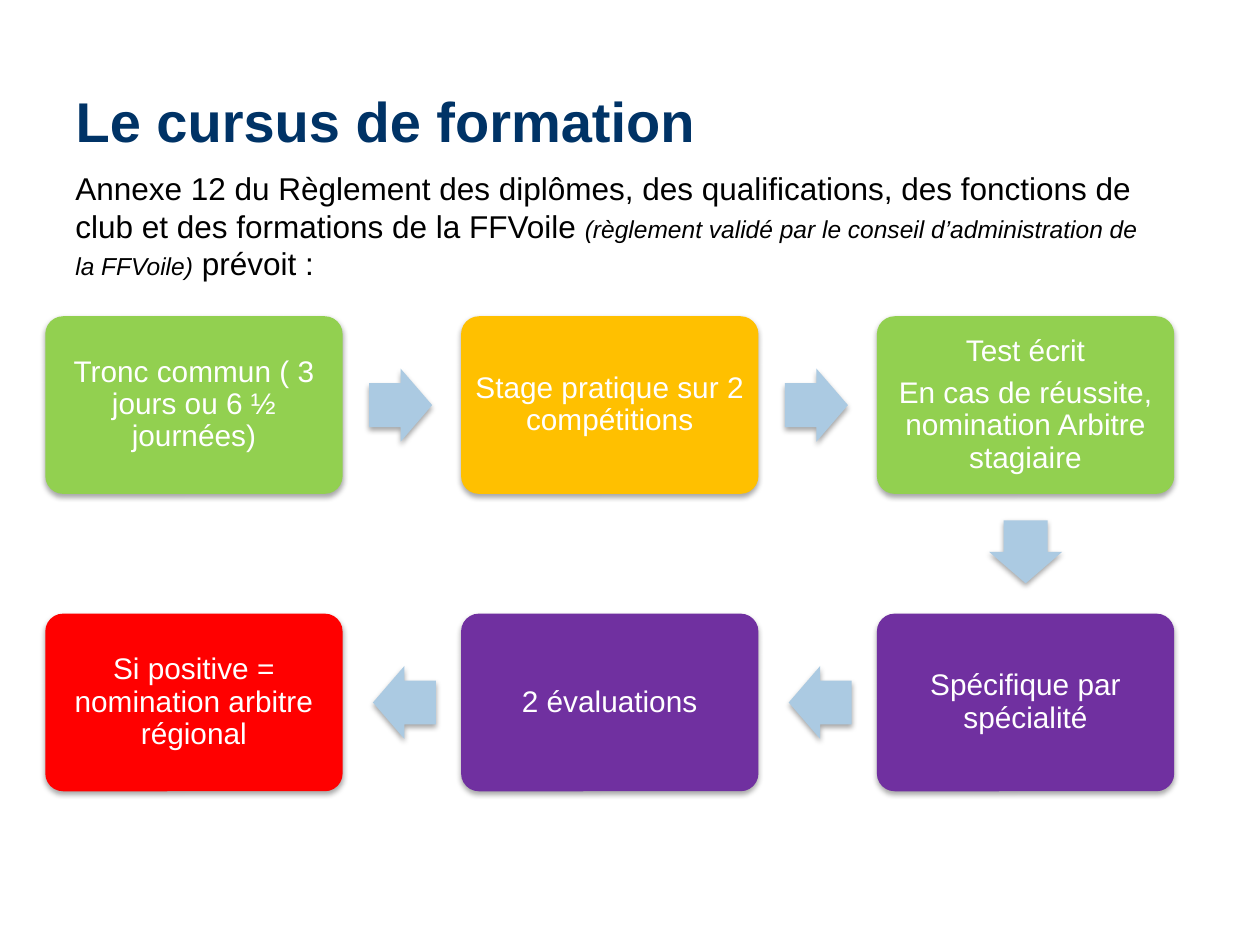
from lxml import etree
from pptx import Presentation
from pptx.dml.color import RGBColor
from pptx.enum.shapes import MSO_SHAPE
from pptx.enum.text import MSO_ANCHOR, PP_ALIGN
from pptx.util import Inches, Pt

BOX, ARROW = MSO_SHAPE.ROUNDED_RECTANGLE, MSO_SHAPE.RIGHT_ARROW
MIDDLE, LEFT, CENTER = MSO_ANCHOR.MIDDLE, PP_ALIGN.LEFT, PP_ALIGN.CENTER
COLORS = {"navy": "003366", "black": "000000", "white": "FFFFFF",
          "green": "92D050", "amber": "FFC000", "violet": "7030A0",
          "red": "FF0000", "arrow": "ABCAE2"}
SHADOW = """<a:effectLst xmlns:a="http://schemas.openxmlformats.org/drawingml/2006/main">
<a:outerShdw blurRad="40000" dist="23000" dir="5400000" rotWithShape="0">
<a:srgbClr val="000000"><a:alpha val="35000"/></a:srgbClr>
</a:outerShdw></a:effectLst>"""


def style(font, size, color):
    font.name, font.size = "Arial", Pt(size)
    font.color.rgb = RGBColor.from_string(COLORS[color])


def draw(kind, x, y, w, h, color):
    shape = slide.shapes.add_shape(kind, Inches(x), Inches(y), Inches(w), Inches(h))
    shape.fill.solid()
    shape.fill.fore_color.rgb = RGBColor.from_string(COLORS[color])
    shape.line.fill.background()
    # Replace the theme shadow with a soft one below the shape
    shape.shadow.inherit = False
    props = shape.fill._xPr
    props.replace(props.effectLst, etree.fromstring(SHADOW))
    return shape


prs = Presentation()
prs.slide_width, prs.slide_height = Inches(10), Inches(7.5)
slide = prs.slides.add_slide(prs.slide_layouts[5])

# Title
title = slide.shapes.title
title.left, title.top = Inches(0.5), Inches(0.6)
title.width, title.height = Inches(9), Inches(0.71)
title.text_frame.text = "Le cursus de formation"
title.text_frame.vertical_anchor = MIDDLE
para = title.text_frame.paragraphs[0]
para.alignment = LEFT
style(para.font, 32, "navy")
para.font.bold = True

# Introduction
intro = slide.shapes.add_textbox(Inches(0.5), Inches(1.29), Inches(8.67), Inches(1.01))
intro.text_frame.word_wrap = True
para = intro.text_frame.paragraphs[0]
for text, size, italic in [
    ("Annexe 12 du Règlement des diplômes, des qualifications, des fonctions de "
     "club et des formations de la FFVoile ", 18, False),
    ("(règlement validé par le conseil d’administration de la FFVoile)", 14, True),
    (" prévoit :", 18, False),
]:
    run = para.add_run()
    run.text = text
    style(run.font, size, "black")
    run.font.italic = italic

# Steps: column, row, colour, paragraphs
STEPS = [
    (0, 0, "green", ["Tronc commun ( 3 jours ou 6 ½ journées)"]),
    (1, 0, "amber", ["Stage pratique sur 2 compétitions"]),
    (2, 0, "green", ["Test écrit",
                     "En cas de réussite, nomination Arbitre stagiaire"]),
    (2, 1, "violet", ["Spécifique par spécialité"]),
    (1, 1, "violet", ["2 évaluations"]),
    (0, 1, "red", ["Si positive = nomination arbitre régional"]),
]
X, Y, W, H = 0.36, 2.51, 2.36, 1.41
DX, DY = 3.3, 2.36
for col, row, color, lines in STEPS:
    box = draw(BOX, X + col * DX, Y + row * DY, W, H, color)
    box.adjustments[0] = 0.1
    frame = box.text_frame
    frame.word_wrap = True
    frame.vertical_anchor = MIDDLE
    frame.margin_left = frame.margin_right = Inches(0.07)
    frame.margin_top = frame.margin_bottom = Inches(0.07)
    frame.text = "\n".join(lines)
    for para in frame.paragraphs:
        para.alignment = CENTER
        para.line_spacing = 0.9
        para.space_after = Pt(6)
        style(para.font, 17, "white")

# Arrows between steps: left, top, rotation
AW, AH = 0.5, 0.58
mid = Y + (H - AH) / 2
for x, y, turn in [(2.93, mid, 0), (2.93 + DX, mid, 0),
                   (X + 2 * DX + (W - AW) / 2, 4.09, 90),
                   (2.96 + DX, mid + DY, 180), (2.96, mid + DY, 180)]:
    arrow = draw(ARROW, x, y, AW, AH, "arrow")
    arrow.adjustments[0], arrow.adjustments[1] = 0.6, 0.5
    arrow.rotation = turn

prs.save("out.pptx")
